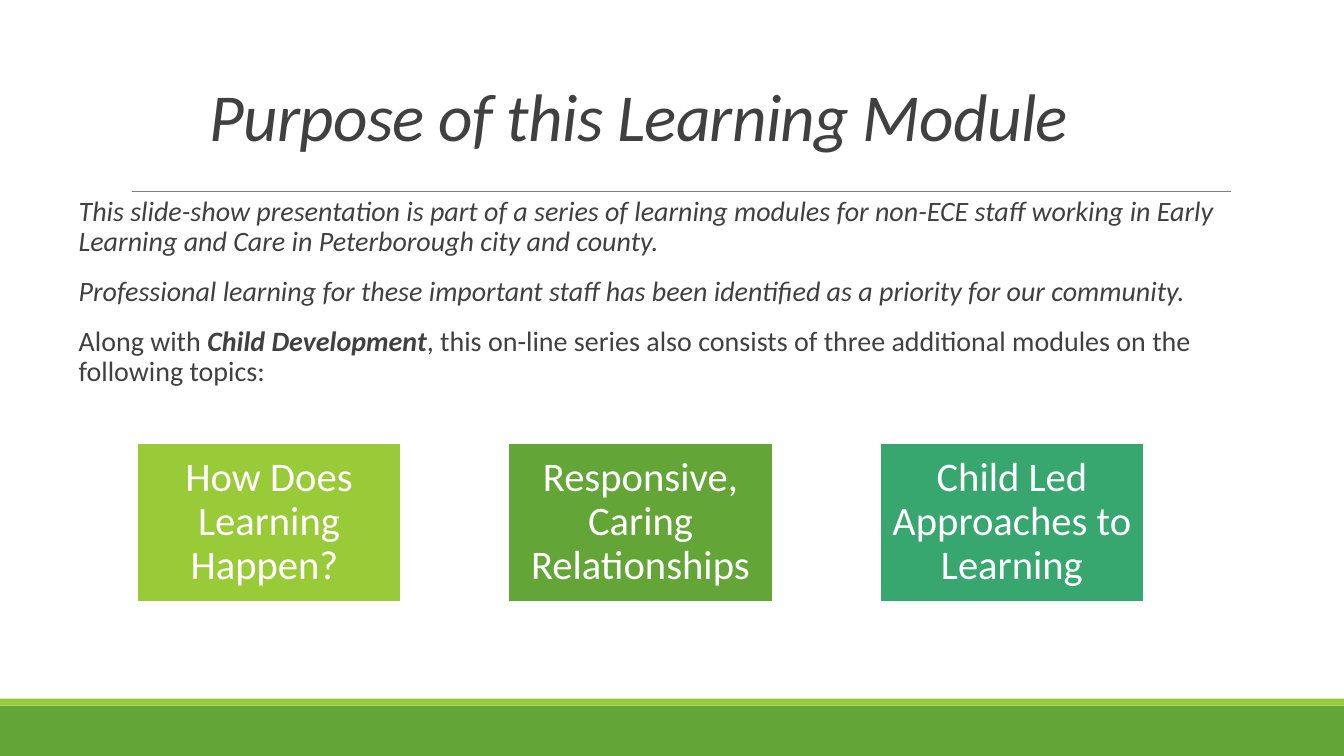
from dataclasses import dataclass

from lxml.etree import SubElement
from pptx import Presentation
from pptx.dml.color import RGBColor
from pptx.enum.shapes import MSO_CONNECTOR, MSO_SHAPE
from pptx.enum.text import MSO_ANCHOR, MSO_AUTO_SIZE, PP_ALIGN
from pptx.oxml.ns import qn
from pptx.util import Pt


@dataclass(frozen=True)
class Theme:
    font: str = "Calibri"
    ink: str = "404040"
    white: str = "FFFFFF"
    rule: str = "808080"
    lime: str = "99CB38"
    green: str = "63A537"
    teal: str = "37A76F"
    title_size: int = 48
    body_size: int = 20
    topic_size: int = 29


THEME = Theme()
SLIDE_WIDTH, SLIDE_HEIGHT = 960, 540

INTRODUCTION = [
    [("This slide-show presentation is part of a series of learning modules for non-ECE staff "
      "working in Early Learning and Care in Peterborough city and county.", False, True)],
    [("Professional learning for these important staff has been identified as a priority "
      "for our community.", False, True)],
    [("Along with ", False, False),
     ("Child Development", True, True),
     (", this on-line series also consists of three additional modules on the following topics:",
      False, False)],
]

TOPICS = [
    ("How Does Learning Happen? ", THEME.lime),
    ("Responsive, Caring Relationships", THEME.green),
    ("Child Led Approaches to Learning", THEME.teal),
]


def add_run(paragraph, text, size, color, bold=False, italic=False):
    run = paragraph.add_run()
    run.text = text
    font = run.font
    font.name = THEME.font
    font.size = Pt(size)
    font.bold = bold
    font.italic = italic
    font.color.rgb = RGBColor.from_string(color)
    return run


def set_frame(frame, anchor, horizontal_inset, vertical_inset):
    frame.word_wrap = True
    frame.auto_size = MSO_AUTO_SIZE.NONE
    frame.vertical_anchor = anchor
    frame.margin_left = frame.margin_right = Pt(horizontal_inset)
    frame.margin_top = frame.margin_bottom = Pt(vertical_inset)


def add_rectangle(slide, left, top, width, height, fill):
    shape = slide.shapes.add_shape(
        MSO_SHAPE.RECTANGLE, Pt(left), Pt(top), Pt(width), Pt(height))
    shape.shadow.inherit = False
    shape.fill.solid()
    shape.fill.fore_color.rgb = RGBColor.from_string(fill)
    shape.line.fill.background()
    return shape


def add_rule(slide, left, right, top):
    connector = slide.shapes.add_connector(
        MSO_CONNECTOR.STRAIGHT, Pt(left), Pt(top), Pt(right), Pt(top))
    connector.line.color.rgb = RGBColor.from_string(THEME.rule)
    connector.line.width = Pt(0.5)
    SubElement(connector._element.spPr, qn("a:effectLst"))


def format_title(slide, text):
    title = slide.shapes.title
    title.left, title.top, title.width, title.height = Pt(142.56), Pt(37.44), Pt(702), Pt(77)
    set_frame(title.text_frame, MSO_ANCHOR.BOTTOM, 7.2, 3.6)
    paragraph = title.text_frame.paragraphs[0]
    paragraph.alignment = PP_ALIGN.LEFT
    paragraph.line_spacing = 0.85
    run = add_run(paragraph, text, THEME.title_size, THEME.ink, italic=True)
    run.font._element.set("spc", "-50")


def add_introduction(slide, paragraphs):
    box = slide.shapes.add_textbox(Pt(56.16), Pt(137.52), Pt(838.8), Pt(157))
    frame = box.text_frame
    set_frame(frame, MSO_ANCHOR.TOP, 0, 3.6)
    for index, runs in enumerate(paragraphs):
        paragraph = frame.add_paragraph() if index else frame.paragraphs[0]
        paragraph.line_spacing = 0.9
        paragraph.space_before = Pt(12 if index else 0)
        paragraph.space_after = Pt(2)
        for text, bold, italic in runs:
            add_run(paragraph, text, THEME.body_size, THEME.ink, bold, italic)


def add_topic(slide, left, text, fill):
    shape = add_rectangle(slide, left, 316.8, 188.64, 113, fill)
    shape.line.color.rgb = RGBColor.from_string(THEME.white)
    shape.line.width = Pt(1.25)
    set_frame(shape.text_frame, MSO_ANCHOR.MIDDLE, 8.64, 8.64)
    paragraph = shape.text_frame.paragraphs[0]
    paragraph.alignment = PP_ALIGN.CENTER
    paragraph.line_spacing = 0.9
    add_run(paragraph, text, THEME.topic_size, THEME.white)


def main():
    presentation = Presentation()
    presentation.slide_width = Pt(SLIDE_WIDTH)
    presentation.slide_height = Pt(SLIDE_HEIGHT)
    slide = presentation.slides.add_slide(presentation.slide_layouts[5])

    add_rectangle(slide, 0, 504, SLIDE_WIDTH, 36, THEME.green)
    add_rectangle(slide, 0, 499, SLIDE_WIDTH, 5, THEME.lime)
    add_rule(slide, 94.32, 879.12, 136.8)
    format_title(slide, "Purpose of this Learning Module")
    add_introduction(slide, INTRODUCTION)
    for index, (text, fill) in enumerate(TOPICS):
        add_topic(slide, 97.92 + 265.32 * index, text, fill)

    presentation.save("out.pptx")


if __name__ == "__main__":
    main()
